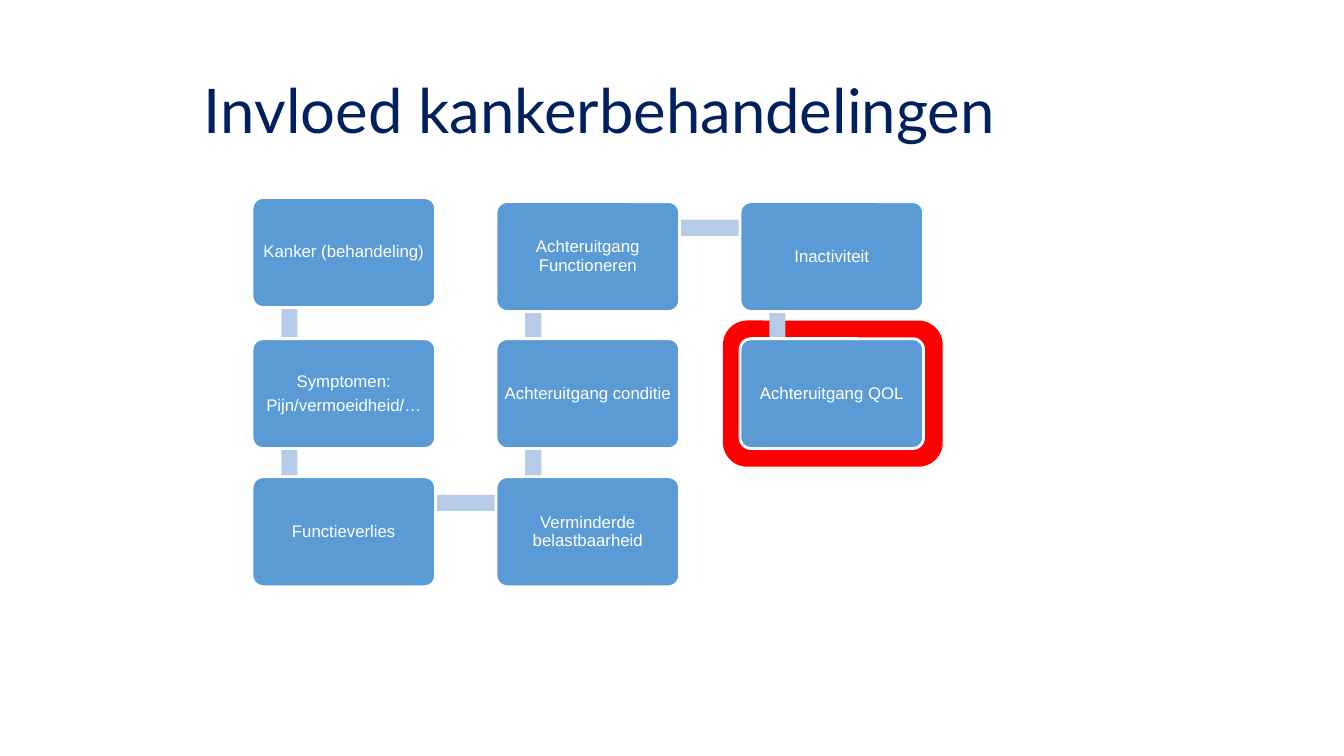
from dataclasses import dataclass

from pptx import Presentation
from pptx.dml.color import RGBColor
from pptx.enum import shapes, text
from pptx.util import Inches, Pt


@dataclass(frozen=True)
class Theme:
    title_color: RGBColor = RGBColor(0x00, 0x20, 0x60)
    step_fill: RGBColor = RGBColor(0x5B, 0x9B, 0xD5)
    bar_fill: RGBColor = RGBColor(0xB5, 0xCB, 0xE7)
    highlight_fill: RGBColor = RGBColor(0xFF, 0x00, 0x00)
    white: RGBColor = RGBColor(0xFF, 0xFF, 0xFF)
    title_font: str = "Lato"
    step_font: str = "Arial"
    title_size: Pt = Pt(44)
    step_size: Pt = Pt(12)
    step_line: Pt = Pt(2)
    step_gap: Pt = Pt(4.2)


THEME = Theme()

# Grid of the snaking process, in inches
COLUMNS = (2.5, 4.92, 7.34)
ROWS = (2.0, 3.36, 4.73)
STEP_W, STEP_H = 1.82, 1.09
FIRST_STEP_LIFT = 0.04
BAR_THICKNESS = 0.16
BAR_INSET_X, BAR_INSET_Y = 0.37, 0.26

# Steps in reading order: column, row, wording
STEPS = (
    (0, 0, "Kanker (behandeling)"),
    (0, 1, "Symptomen:\nPijn/vermoeidheid/…"),
    (0, 2, "Functieverlies"),
    (1, 2, "Verminderde belastbaarheid"),
    (1, 1, "Achteruitgang conditie"),
    (1, 0, "Achteruitgang Functioneren"),
    (2, 0, "Inactiviteit"),
    (2, 1, "Achteruitgang QOL"),
)


def add_block(slide, kind, left, top, width, height, fill):
    block = slide.shapes.add_shape(
        kind, Inches(left), Inches(top), Inches(width), Inches(height))
    block.shadow.inherit = False
    block.fill.solid()
    block.fill.fore_color.rgb = fill
    block.line.fill.background()
    return block


def style_paragraph(paragraph, font_name, size, color):
    paragraph.line_spacing = 0.9
    paragraph.font.name = font_name
    paragraph.font.size = size
    paragraph.font.color.rgb = color


def add_title(slide, wording):
    title = slide.shapes.add_textbox(
        Inches(0.92), Inches(0.4), Inches(11.5), Inches(1.45))
    frame = title.text_frame
    frame.word_wrap = True
    frame.vertical_anchor = text.MSO_ANCHOR.MIDDLE
    frame.margin_left = Inches(1.1)
    frame.text = wording
    style_paragraph(frame.paragraphs[0], THEME.title_font,
                    THEME.title_size, THEME.title_color)


def add_bar(slide, start, end):
    """Join two steps, given by their top left corners."""
    left, right = sorted((start[0], end[0]))
    top, bottom = sorted((start[1], end[1]))
    half = BAR_THICKNESS / 2
    x, y = left + BAR_INSET_X, top + BAR_INSET_Y
    if left == right:
        box = (x - half, y, BAR_THICKNESS, bottom - top)
    else:
        box = (x, y - half, right - left, BAR_THICKNESS)
    add_block(slide, shapes.MSO_SHAPE.RECTANGLE, *box, THEME.bar_fill)


def add_step(slide, corner, wording):
    step = add_block(slide, shapes.MSO_SHAPE.ROUNDED_RECTANGLE,
                     *corner, STEP_W, STEP_H, THEME.step_fill)
    step.adjustments[0] = 0.1
    step.line.color.rgb = THEME.white
    step.line.width = THEME.step_line
    frame = step.text_frame
    frame.word_wrap = True
    frame.vertical_anchor = text.MSO_ANCHOR.MIDDLE
    frame.margin_left = frame.margin_right = Inches(0.05)
    frame.margin_top = frame.margin_bottom = Inches(0.05)
    frame.text = wording
    for paragraph in frame.paragraphs:
        paragraph.alignment = text.PP_ALIGN.CENTER
        paragraph.space_after = THEME.step_gap
        style_paragraph(paragraph, THEME.step_font,
                        THEME.step_size, THEME.white)


def main():
    prs = Presentation()
    prs.slide_width, prs.slide_height = Inches(13.33), Inches(7.5)
    slide = prs.slides.add_slide(prs.slide_layouts[6])

    add_title(slide, "Invloed kankerbehandelingen")

    # Red highlight behind the final step
    add_block(slide, shapes.MSO_SHAPE.ROUNDED_RECTANGLE,
              7.17, 3.18, 2.18, 1.45, THEME.highlight_fill)

    # Bars first, so that the steps cover their ends
    corners = [(COLUMNS[column], ROWS[row]) for column, row, _ in STEPS]
    corners[0] = (COLUMNS[0], ROWS[0] - FIRST_STEP_LIFT)
    for start, end in zip(corners, corners[1:]):
        add_bar(slide, start, end)
    for corner, (_, _, wording) in zip(corners, STEPS):
        add_step(slide, corner, wording)

    prs.save("out.pptx")


if __name__ == "__main__":
    main()
